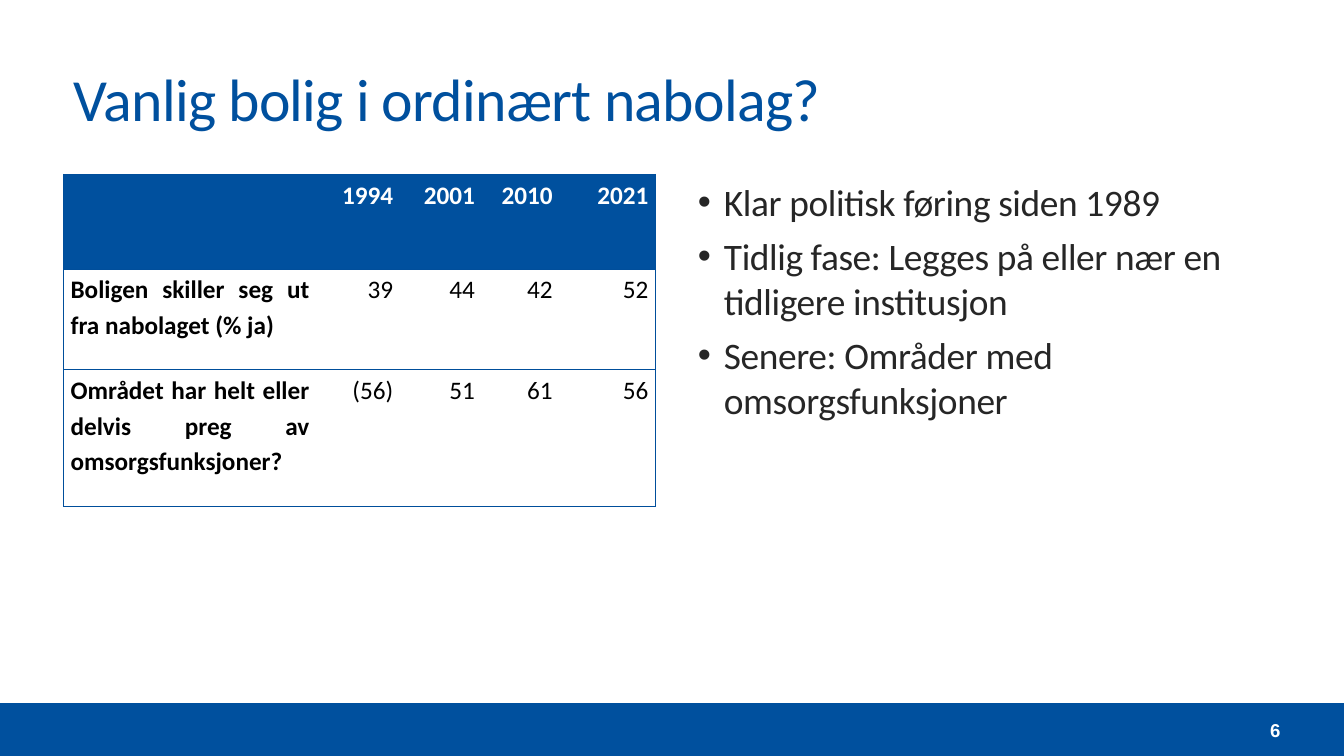
from pptx import Presentation
from pptx.dml.color import RGBColor
from pptx.enum.shapes import MSO_SHAPE
from pptx.enum.text import MSO_ANCHOR, MSO_AUTO_SIZE, PP_ALIGN
from pptx.oxml.ns import qn
from pptx.util import Cm, Pt
from lxml import etree

RECTANGLE = MSO_SHAPE.RECTANGLE
LEFT, RIGHT, JUSTIFY = PP_ALIGN.LEFT, PP_ALIGN.RIGHT, PP_ALIGN.JUSTIFY
TOP, MIDDLE = MSO_ANCHOR.TOP, MSO_ANCHOR.MIDDLE
NO_AUTOFIT = MSO_AUTO_SIZE.NONE

TITLE = "Vanlig bolig i ordinært nabolag?"
HOUSING_ROWS = [
    ("", "1994", "2001", "2010", "2021"),
    ("Boligen skiller seg ut fra nabolaget (% ja)", "39", "44", "42", "52"),
    ("Området har helt eller delvis preg av omsorgsfunksjoner?", "(56)", "51", "61", "56"),
]
POINTS = [
    "Klar politisk føring siden 1989",
    "Tidlig fase: Legges på eller nær en tidligere institusjon",
    "Senere: Områder med omsorgsfunksjoner",
]
PAGE_NUMBER = "6"

THEME = {
    "blue": RGBColor.from_string("00509E"),
    "border": "004E9B",
    "white": RGBColor.from_string("FFFFFF"),
    "black": RGBColor.from_string("000000"),
    "ink": RGBColor.from_string("262626"),
    "font": "Calibri",
    "number_font": "Arial",
    "title_size": Pt(42.7),
    "list_size": Pt(26.7),
    "table_size": Pt(18),
    "number_size": Pt(13.3),
}

SLIDE_WIDTH, SLIDE_HEIGHT = Cm(33.87), Cm(19.05)
MARGIN = Cm(1.6)
CONTENT_WIDTH = SLIDE_WIDTH - 2 * MARGIN
CONTENT_TOP = Cm(4.39)
COLUMN_WIDTH = Cm(14.94)
BAND_HEIGHT = Cm(1.33)
BAND_TOP = SLIDE_HEIGHT - BAND_HEIGHT
NUMBER_WIDTH = Cm(2.41)
YEAR_WIDTHS = [Cm(6.38), Cm(2.11), Cm(2.06), Cm(1.96), Cm(2.41)]
ROW_HEIGHTS = [Cm(2.39), Cm(2.54), Cm(3.43)]
BULLET_INDENT = Cm(0.66)


def apply(target, **values):
    for name, value in values.items():
        setattr(target, name, value)


def write(paragraph, words, color, size, bold=False, font=THEME["font"], spacing=0, **layout):
    apply(paragraph, **layout)
    targets = [paragraph.font]
    if words:
        run = paragraph.add_run()
        run.text = words
        targets.append(run.font)
        if spacing:
            run._r.get_or_add_rPr().set("spc", str(spacing))
    for target in targets:
        apply(target, name=font, size=size, bold=bold)
        target.color.rgb = color


def draw_borders(cell, visible_sides):
    properties = cell._tc.get_or_add_tcPr()
    for side in "LRTB":
        line = etree.SubElement(properties, qn(f"a:ln{side}"), w=str(Pt(0.75)))
        if side in visible_sides:
            fill = etree.SubElement(line, qn("a:solidFill"))
            etree.SubElement(fill, qn("a:srgbClr"), val=THEME["border"])
        else:
            etree.SubElement(line, qn("a:noFill"))


def add_footer(slide):
    band = slide.shapes.add_shape(RECTANGLE, 0, BAND_TOP, SLIDE_WIDTH, BAND_HEIGHT)
    band.shadow.inherit = False
    band.fill.solid()
    band.fill.fore_color.rgb = THEME["blue"]
    band.line.fill.background()
    number = slide.shapes.add_textbox(
        SLIDE_WIDTH - MARGIN - NUMBER_WIDTH, BAND_TOP, NUMBER_WIDTH, BAND_HEIGHT).text_frame
    apply(number, word_wrap=True, vertical_anchor=MIDDLE,
          margin_left=0, margin_right=0, margin_top=0, margin_bottom=0)
    write(number.paragraphs[0], PAGE_NUMBER, THEME["white"], THEME["number_size"],
          bold=True, font=THEME["number_font"], alignment=RIGHT)


def add_title(slide):
    title = slide.shapes.title
    apply(title, left=MARGIN, top=Cm(0.79), width=CONTENT_WIDTH, height=Cm(3.32))
    apply(title.text_frame, vertical_anchor=MIDDLE, auto_size=NO_AUTOFIT)
    write(title.text_frame.paragraphs[0], TITLE, THEME["blue"], THEME["title_size"],
          spacing=-50, alignment=LEFT)


def add_housing_table(slide):
    table = slide.shapes.add_table(
        len(HOUSING_ROWS), len(YEAR_WIDTHS), MARGIN, CONTENT_TOP,
        sum(YEAR_WIDTHS), sum(ROW_HEIGHTS)).table
    table.horz_banding = False
    for column, width in zip(table.columns, YEAR_WIDTHS):
        column.width = width
    for row, height in zip(table.rows, ROW_HEIGHTS):
        row.height = height
    last_column = len(YEAR_WIDTHS) - 1
    for row_index, values in enumerate(HOUSING_ROWS):
        for column_index, value in enumerate(values):
            cell = table.cell(row_index, column_index)
            header, label = row_index == 0, column_index == 0
            apply(cell, margin_left=Cm(0.18), margin_right=Cm(0.18),
                  margin_top=Cm(0.03), margin_bottom=0, vertical_anchor=TOP)
            sides = "TB" + "L" * label + "R" * (column_index == last_column)
            draw_borders(cell, sides)
            cell.fill.solid()
            cell.fill.fore_color.rgb = THEME["blue" if header else "white"]
            write(cell.text_frame.paragraphs[0], value,
                  THEME["white" if header else "black"], THEME["table_size"],
                  bold=header or label, alignment=JUSTIFY if label else RIGHT,
                  line_spacing=1.15)


def add_points(slide):
    points = slide.placeholders[1]
    apply(points, left=SLIDE_WIDTH - MARGIN - COLUMN_WIDTH, top=CONTENT_TOP,
          width=COLUMN_WIDTH, height=Cm(12.93))
    frame = points.text_frame
    apply(frame, auto_size=NO_AUTOFIT, vertical_anchor=TOP)
    for index, point in enumerate(POINTS):
        paragraph = frame.add_paragraph() if index else frame.paragraphs[0]
        properties = paragraph._p.get_or_add_pPr()
        properties.set("marL", str(BULLET_INDENT))
        properties.set("indent", str(-BULLET_INDENT))
        etree.SubElement(properties, qn("a:buFont"), typeface="Arial")
        etree.SubElement(properties, qn("a:buChar"), char="•")
        write(paragraph, point, THEME["ink"], THEME["list_size"], spacing=-30,
              alignment=LEFT, space_before=Pt(6.7 if index else 0))


def main():
    presentation = Presentation()
    apply(presentation, slide_width=SLIDE_WIDTH, slide_height=SLIDE_HEIGHT)
    slide = presentation.slides.add_slide(presentation.slide_layouts[1])
    add_footer(slide)
    add_title(slide)
    add_housing_table(slide)
    add_points(slide)
    presentation.save("out.pptx")


if __name__ == "__main__":
    main()
